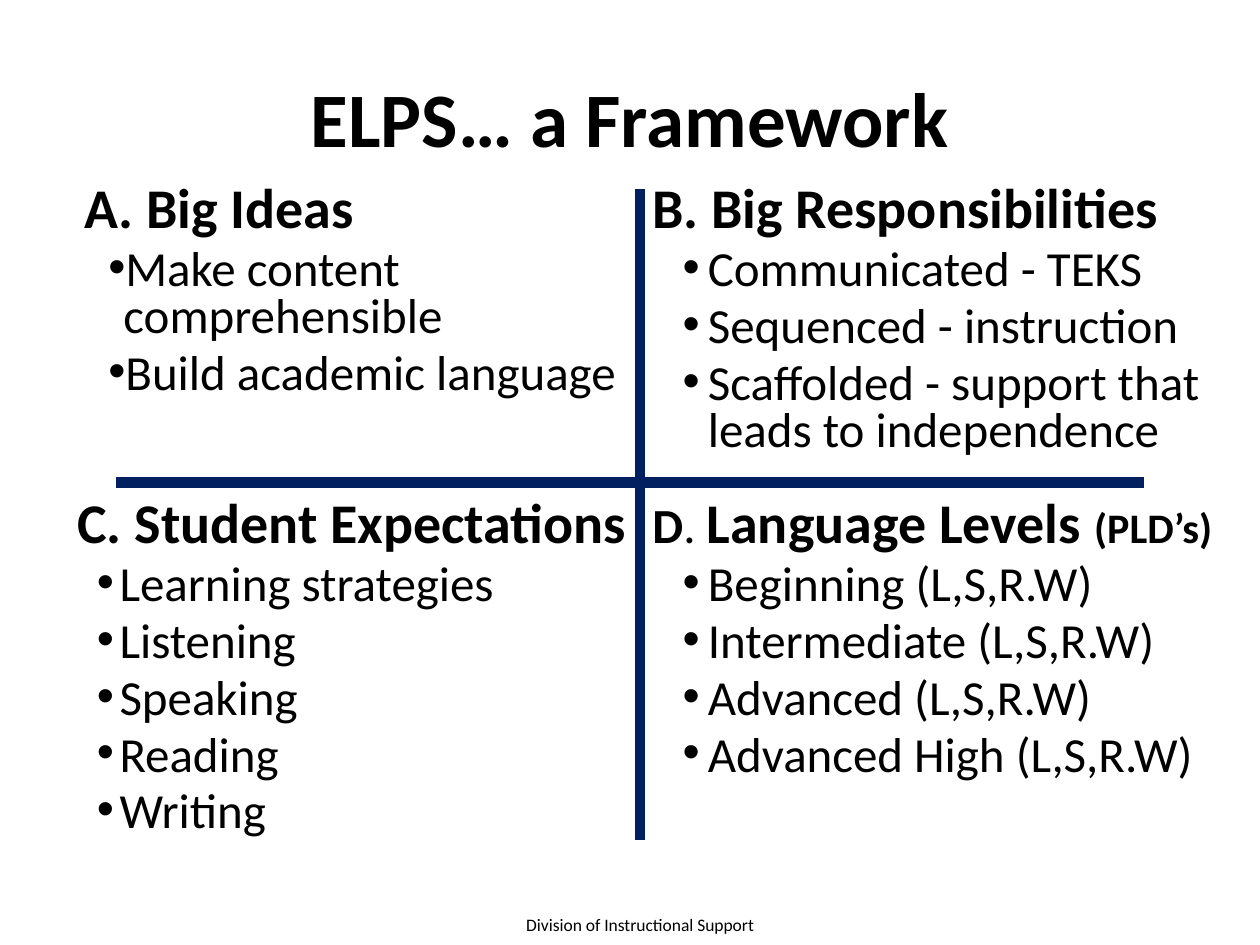
from lxml.etree import SubElement
from pptx import Presentation
from pptx.dml.color import RGBColor
from pptx.enum.shapes import MSO_CONNECTOR as Connector
from pptx.enum.text import MSO_ANCHOR as Anchor, MSO_AUTO_SIZE as AutoSize, PP_ALIGN as Align
from pptx.oxml.ns import qn
from pptx.util import Inches, Pt

BLACK = RGBColor(0x00, 0x00, 0x00)
NAVY = RGBColor(0x00, 0x20, 0x60)
FONT = "Calibri"
HEADING_SIZE, ITEM_SIZE = 32, 28
MIDDLE_X, MIDDLE_Y = 5.08, 3.83
UPPER_TOP, LOWER_TOP = 1.42, 3.92


class FrameworkSlide:
    def __init__(self, page):
        self.page = page

    def place(self, box, left, top, width, height, anchor=Anchor.TOP):
        box.left, box.top, box.width, box.height = map(Inches, (left, top, width, height))
        frame = box.text_frame
        frame.word_wrap = True
        frame.auto_size = AutoSize.NONE
        frame.vertical_anchor = anchor
        return frame

    def text_box(self, *area, anchor=Anchor.TOP):
        box = self.page.shapes.add_textbox(0, 0, 0, 0)
        return self.place(box, *area, anchor=anchor)

    def span(self, para, text, size, bold=False):
        span = para.add_run()
        span.text = text
        font = span.font
        font.name, font.size, font.bold = FONT, Pt(size), bold
        font.color.rgb = BLACK

    def line_of_text(self, frame, text, size, bold=False, anchor_align=Align.CENTER):
        para = frame.paragraphs[0]
        para.alignment = anchor_align
        self.span(para, text, size, bold)

    def list_style(self, para, margin, indent, bullet=False):
        """Set tight spacing, a hanging indent and, for items, a bullet."""
        para.line_spacing = 0.8
        para.space_before = Pt(ITEM_SIZE * 0.2 if bullet else 0)
        props = para._p.get_or_add_pPr()
        props.set("marL", str(Inches(margin)))
        props.set("indent", str(Inches(indent)))
        if bullet:
            SubElement(props, qn("a:buFont")).set("typeface", "Arial")
            SubElement(props, qn("a:buChar")).set("char", "•")
        else:
            SubElement(props, qn("a:buNone"))

    def quadrant(self, frame, heading, items, heading_indent, item_indent, align=Align.LEFT):
        """Write a heading of (text, size, bold) spans with its bulleted items."""
        para = frame.paragraphs[0]
        para.alignment = align
        self.list_style(para, *heading_indent)
        for text, size, bold in heading:
            self.span(para, text, size, bold)
        for item in items:
            para = frame.add_paragraph()
            para.alignment = Align.LEFT
            self.list_style(para, *item_indent, bullet=True)
            self.span(para, item, ITEM_SIZE)

    def divider(self, *ends):
        line = self.page.shapes.add_connector(Connector.STRAIGHT, *map(Inches, ends))
        line.line.color.rgb = NAVY
        line.line.width = Pt(6)
        SubElement(line._element.spPr, qn("a:effectLst"))


def main():
    deck = Presentation()
    deck.slide_width, deck.slide_height = Inches(10), Inches(7.5)
    page = deck.slides.add_slide(deck.slide_layouts[1])
    slide = FrameworkSlide(page)

    title = slide.place(page.shapes.title, 0.5, 0.3, 9, 1.25, anchor=Anchor.MIDDLE)
    slide.line_of_text(title, "ELPS… a Framework", 44, bold=True)

    ideas = slide.place(page.placeholders[1], 0.5, UPPER_TOP, 4.58, 2.08)
    slide.quadrant(ideas, [("A. Big Ideas", HEADING_SIZE, True)],
                   ["Make content comprehensible", "Build academic language"],
                   (0.25, -0.18), (0.38, -0.12))

    duties = slide.text_box(MIDDLE_X, UPPER_TOP, 4.83, 2.25)
    slide.quadrant(duties, [("B. Big Responsibilities", HEADING_SIZE, True)],
                   ["Communicated - TEKS", "Sequenced - instruction",
                    "Scaffolded - support that leads to independence"],
                   (0, 0), (0.44, -0.2))

    slide.divider(MIDDLE_X, 1.5, MIDDLE_X, 6.67)
    slide.divider(0.92, MIDDLE_Y, 9.08, MIDDLE_Y)

    expectations = slide.text_box(0.42, LOWER_TOP, 4.75, 2.75)
    slide.quadrant(expectations, [("C. Student Expectations", HEADING_SIZE, True)],
                   ["Learning strategies", "Listening", "Speaking", "Reading", "Writing"],
                   (0.38, -0.38), (0.43, -0.18), align=Align.CENTER)

    levels = slide.text_box(MIDDLE_X, LOWER_TOP, 4.83, 2.33)
    slide.quadrant(levels,
                   [("D", ITEM_SIZE, True), (". ", ITEM_SIZE, False),
                    ("Language Levels ", HEADING_SIZE, True), ("(PLD’s)", 24, True)],
                   [f"{level} (L,S,R.W)" for level in
                    ("Beginning", "Intermediate", "Advanced", "Advanced High")],
                   (0.18, -0.18), (0.44, -0.2))

    footer = slide.text_box(3.58, 7.17, 3, 0.33, anchor=Anchor.MIDDLE)
    slide.line_of_text(footer, "Division of Instructional Support", 10)

    deck.save("out.pptx")


if __name__ == "__main__":
    main()
